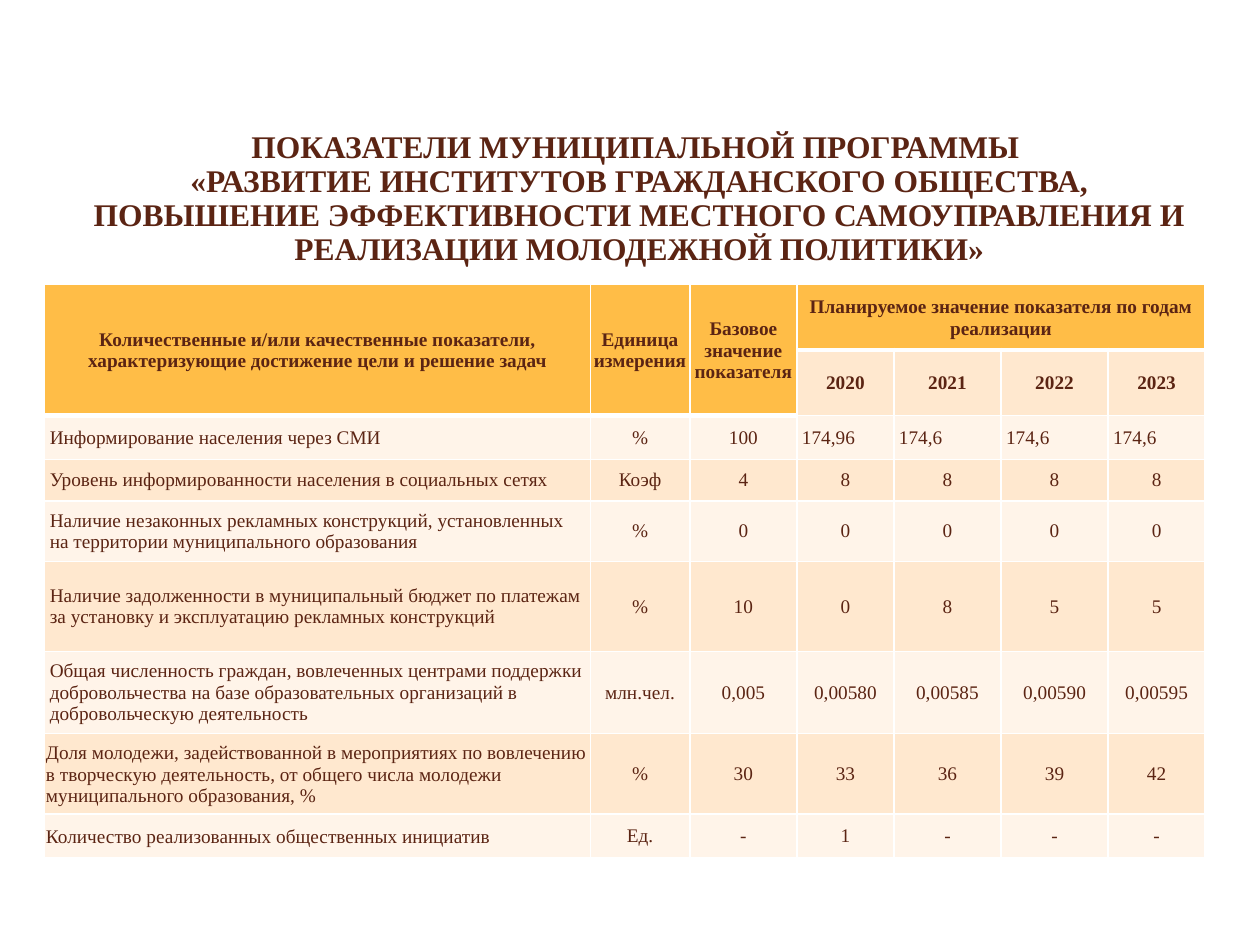
from dataclasses import dataclass
from itertools import accumulate

from lxml.etree import SubElement
from pptx import Presentation
from pptx.dml.color import RGBColor
from pptx.enum.text import MSO_ANCHOR, MSO_AUTO_SIZE, PP_ALIGN
from pptx.oxml.ns import qn
from pptx.table import Table, _Cell
from pptx.util import Inches, Pt

SLIDE_WIDTH, SLIDE_HEIGHT = Inches(10), Inches(7.5)
BROWN, AMBER, PEACH, CREAM, WHITE = "5B2413", "FFBD47", "FFE8CF", "FFF4E9", "FFFFFF"
FONT = "Times New Roman"

# Column widths and row heights as percentages of the slide
COLUMNS = [43.3, 7.9, 8.5, 7.7, 8.5, 8.5, 7.7]
ROWS = [6.93, 6.93, 4.67, 4.4, 6.4, 9.53, 8.67, 8.53, 4.67]
TABLE_LEFT, TABLE_TOP = 3.55, 30.1

TIGHT = {"margin_left": 0.01, "margin_top": 0.01, "margin_right": 0.01, "margin_bottom": 0}
ROOMY = {"margin_left": 0.04, "margin_top": 0.07, "margin_right": 0.04, "margin_bottom": 0.07}

TITLE = ("ПОКАЗАТЕЛИ МУНИЦИПАЛЬНОЙ ПРОГРАММЫ \v«РАЗВИТИЕ ИНСТИТУТОВ ГРАЖДАНСКОГО ОБЩЕСТВА, "
         "ПОВЫШЕНИЕ ЭФФЕКТИВНОСТИ МЕСТНОГО САМОУПРАВЛЕНИЯ И РЕАЛИЗАЦИИ МОЛОДЕЖНОЙ ПОЛИТИКИ»")


@dataclass
class Heading:
    text: str
    column: int
    row: int = 0
    columns: int = 1
    rows: int = 1
    fill: str = AMBER


@dataclass
class Indicator:
    name: str
    unit: str
    base: str
    years: list[str]
    tight_name: bool = False
    years_align: PP_ALIGN = PP_ALIGN.CENTER


HEADINGS = [
    Heading("Количественные и/или качественные показатели, характеризующие "
            "достижение цели и решение задач", 0, rows=2),
    Heading("Единица измерения", 1, rows=2),
    Heading("Базовое значение показателя", 2, rows=2),
    Heading("Планируемое значение показателя по годам реализации", 3, columns=4),
    *(Heading(str(year), column, row=1, fill=PEACH)
      for column, year in enumerate(range(2020, 2024), start=3)),
]

INDICATORS = [
    Indicator("Информирование населения через СМИ", "%", "100",
              ["174,96", "174,6", "174,6", "174,6"], years_align=PP_ALIGN.LEFT),
    Indicator("Уровень информированности населения в социальных сетях", "Коэф", "4", ["8"] * 4),
    Indicator("Наличие незаконных рекламных конструкций, установленных на территории "
              "муниципального образования", "%", "0", ["0"] * 4),
    Indicator("Наличие задолженности в муниципальный бюджет по платежам за установку и "
              "эксплуатацию рекламных конструкций", "%", "10", ["0", "8", "5", "5"]),
    Indicator("Общая численность граждан, вовлеченных центрами поддержки добровольчества на базе "
              "образовательных организаций в добровольческую деятельность", "млн.чел.", "0,005",
              ["0,00580", "0,00585", "0,00590", "0,00595"]),
    Indicator("Доля молодежи, задействованной в мероприятиях по вовлечению в творческую "
              "деятельность, от общего числа молодежи муниципального образования, %", "%", "30",
              ["33", "36", "39", "42"], tight_name=True),
    Indicator("Количество реализованных общественных инициатив", "Ед.", "-",
              ["1", "-", "-", "-"], tight_name=True),
]


def across(percent: float) -> int:
    return round(SLIDE_WIDTH * percent / 100)


def down(percent: float) -> int:
    return round(SLIDE_HEIGHT * percent / 100)


def colour(value: str) -> RGBColor:
    return RGBColor.from_string(value)


def set_all(target, values: dict) -> None:
    for name, value in values.items():
        setattr(target, name, value)


def format_font(font, size: float, bold: bool) -> None:
    set_all(font, {"name": FONT, "size": Pt(size), "bold": bold})
    font.color.rgb = colour(BROWN)


def add_borders(cell: _Cell, bottom: float) -> None:
    properties = cell._tc.get_or_add_tcPr()
    for side, width in {"lnL": 1, "lnR": 1, "lnT": 1, "lnB": bottom}.items():
        line = SubElement(properties, qn(f"a:{side}"), w=str(Pt(width)))
        SubElement(SubElement(line, qn("a:solidFill")), qn("a:srgbClr"), val=WHITE)


def paint(cell: _Cell, fill: str) -> None:
    add_borders(cell, 3 if fill == AMBER else 1)
    cell.fill.solid()
    cell.fill.fore_color.rgb = colour(fill)


def write(cell: _Cell, text: str, align: PP_ALIGN, margins: dict, bold: bool = False) -> None:
    set_all(cell, {name: Inches(value) for name, value in margins.items()})
    set_all(cell, {"text": text, "vertical_anchor": MSO_ANCHOR.MIDDLE})
    para = cell.text_frame.paragraphs[0]
    para.alignment = align
    format_font(para.runs[0].font, 11, bold)


def draw_heading(table: Table, heading: Heading) -> None:
    rows = range(heading.row, heading.row + heading.rows)
    columns = range(heading.column, heading.column + heading.columns)
    for row in rows:
        for column in columns:
            paint(table.cell(row, column), heading.fill)
    first = table.cell(rows[0], columns[0])
    if len(rows) * len(columns) > 1:
        first.merge(table.cell(rows[-1], columns[-1]))
    write(first, heading.text, PP_ALIGN.CENTER, TIGHT, bold=True)


def draw_indicator(table: Table, row: int, indicator: Indicator) -> None:
    texts = [indicator.name, indicator.unit, indicator.base, *indicator.years]
    aligns = [PP_ALIGN.LEFT, PP_ALIGN.CENTER, PP_ALIGN.CENTER] + [indicator.years_align] * 4
    for column, (text, align) in enumerate(zip(texts, aligns)):
        cell = table.cell(row, column)
        paint(cell, PEACH if row % 2 else CREAM)
        tight = indicator.tight_name and column == 0
        write(cell, text, align, TIGHT if tight else ROOMY)


def draw_title(title) -> None:
    set_all(title, {"left": across(5.1), "top": down(13.2),
                    "width": across(91.3), "height": down(15.73)})
    frame = title.text_frame
    set_all(frame, {"text": TITLE, "word_wrap": True, "auto_size": MSO_AUTO_SIZE.NONE,
                    "vertical_anchor": MSO_ANCHOR.MIDDLE})
    para = frame.paragraphs[0]
    set_all(para, {"alignment": PP_ALIGN.CENTER, "line_spacing": 0.9})
    for span in para.runs:
        format_font(span.font, 18, True)


def draw_table(page) -> None:
    table = page.shapes.add_table(
        len(ROWS), len(COLUMNS), across(TABLE_LEFT), down(TABLE_TOP),
        across(sum(COLUMNS)), down(sum(ROWS))).table
    for column, width in zip(table.columns, COLUMNS):
        column.width = across(width)
    for row, height in zip(table.rows, ROWS):
        row.height = down(height)
    for heading in HEADINGS:
        draw_heading(table, heading)
    for row, indicator in enumerate(INDICATORS, start=2):
        draw_indicator(table, row, indicator)


def main() -> None:
    deck = Presentation()
    set_all(deck, {"slide_width": SLIDE_WIDTH, "slide_height": SLIDE_HEIGHT})
    page = deck.slides.add_slide(deck.slide_layouts.get_by_name("Title Only"))
    draw_title(page.shapes.title)
    draw_table(page)
    deck.save("out.pptx")


if __name__ == "__main__":
    main()
